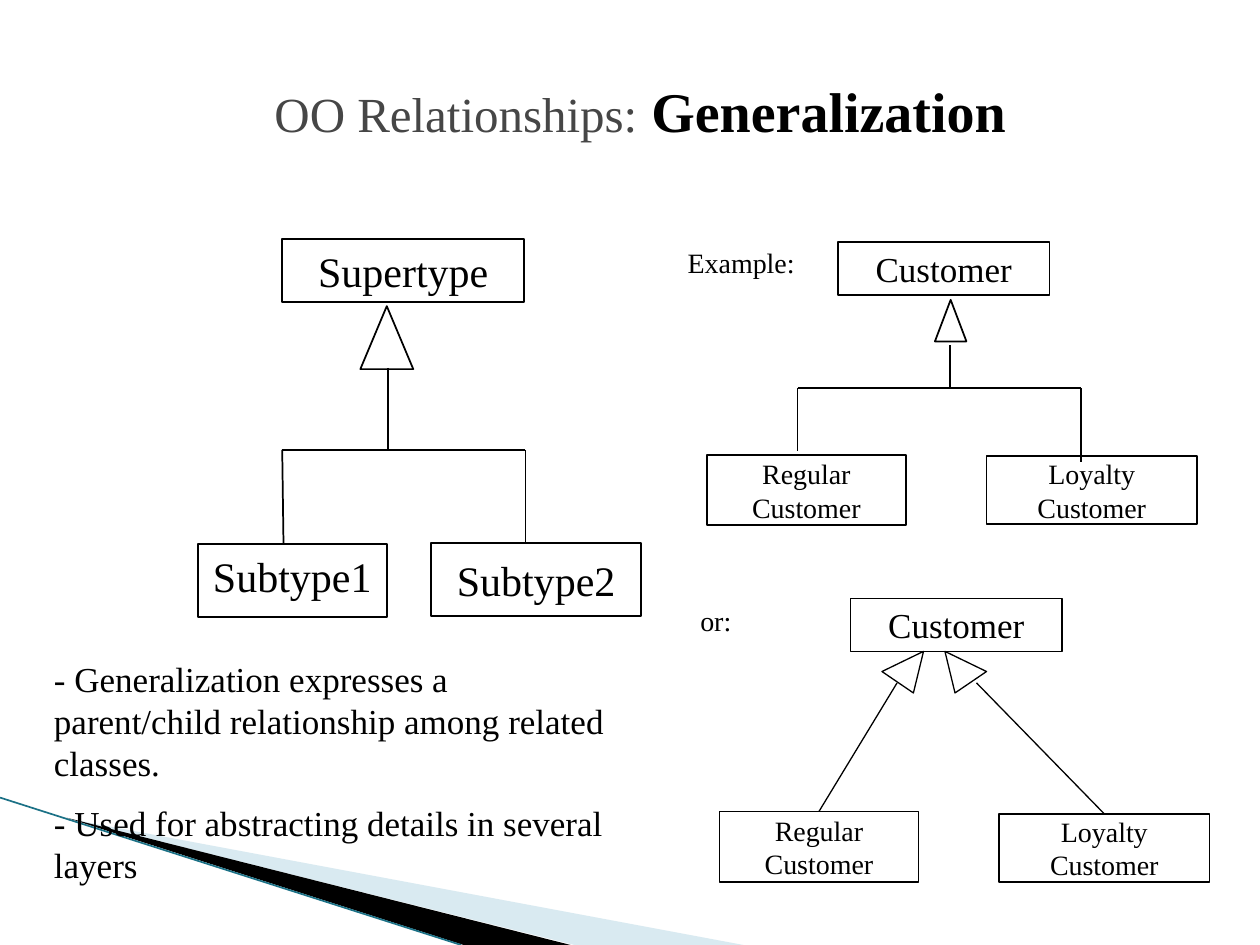
from dataclasses import dataclass

from lxml import etree
from pptx import Presentation
from pptx.dml.color import RGBColor
from pptx.enum.shapes import MSO_CONNECTOR, MSO_SHAPE
from pptx.enum.text import MSO_ANCHOR as Anchor, PP_ALIGN as Align
from pptx.oxml.ns import qn
from pptx.util import Inches, Pt


@dataclass(frozen=True)
class Theme:
    font: str = "Times New Roman"
    ink: RGBColor = RGBColor(0x00, 0x00, 0x00)
    muted: RGBColor = RGBColor(0x46, 0x46, 0x46)
    pale: RGBColor = RGBColor(0xA0, 0xCB, 0xDC)
    edge: RGBColor = RGBColor(0x1B, 0x71, 0x86)
    title: int = 32
    lead: int = 28
    type_name: int = 24
    body: int = 20
    small: int = 16


theme = Theme()
prs = Presentation()
prs.slide_width, prs.slide_height = Inches(10), Inches(7.5)
shapes = prs.slides.add_slide(prs.slide_layouts[6]).shapes


def write(holder, lines, size, align=Align.LEFT, anchor=Anchor.TOP, gap=0):
    """Fill a shape with one paragraph per line, gap points apart."""
    frame = holder.text_frame
    frame.word_wrap = True
    frame.vertical_anchor = anchor
    frame.text = "\n".join(lines)
    for index, paragraph in enumerate(frame.paragraphs):
        paragraph.alignment = align
        paragraph.space_before = Pt(gap if index else 0)
        paragraph.font.name = theme.font
        paragraph.font.size = Pt(size)
        paragraph.font.color.rgb = theme.ink


def draw_line(x1, y1, x2, y2, width=1.0, color=theme.ink):
    line = shapes.add_connector(MSO_CONNECTOR.STRAIGHT, *map(Inches, (x1, y1, x2, y2)))
    line.line.width = Pt(width)
    line.line.color.rgb = color
    etree.SubElement(line._element.spPr, qn("a:effectLst"))
    return line


# Corner decoration
wedges = [
    ([(0.55, 6.5), (5.9, 7.5), (4.56, 7.5)], theme.pale, 40),
    ([(0.53, 6.49), (4.53, 7.5), (3.68, 7.5)], theme.ink, 100),
]
for corners, color, opacity in wedges:
    start, *rest = [(Inches(x), Inches(y)) for x, y in corners]
    outline = shapes.build_freeform(*start)
    outline.add_line_segments(rest)
    wedge = outline.convert_to_shape()
    wedge.shadow.inherit = False
    wedge.fill.solid()
    wedge.fill.fore_color.rgb = color
    wedge.line.fill.background()
    if opacity < 100:
        tint = wedge._element.spPr.find(".//" + qn("a:srgbClr"))
        etree.SubElement(tint, qn("a:alpha")).set("val", str(opacity * 1000))
draw_line(0, 6.33, 3.66, 7.5, 0.95, theme.edge)

# Title
title = shapes.add_textbox(Inches(2.08), Inches(0.56), Inches(6.73), Inches(0.63))
write(title, [""], theme.title)
heading = title.text_frame.paragraphs[0]
for words, size, color, bold in [
    ("OO Relationships:", theme.lead, theme.muted, False),
    (" ", theme.title, theme.muted, False),
    ("Generalization", theme.title, theme.ink, True),
]:
    run = heading.add_run()
    run.text = words
    run.font.size = Pt(size)
    run.font.color.rgb = color
    run.font.bold = bold

# Class boxes: key, lines, left, top, width, height, size
class_boxes = [
    ("supertype", ["Supertype"], 2.24, 1.9, 1.92, 0.5, theme.type_name),
    ("subtype1", ["Subtype1"], 1.57, 4.32, 1.5, 0.58, theme.type_name),
    ("subtype2", ["Subtype2"], 3.42, 4.31, 1.67, 0.58, theme.type_name),
    ("customer", ["Customer"], 6.65, 1.92, 1.68, 0.42, theme.body),
    ("regular", ["Regular", "Customer"], 5.61, 3.61, 1.58, 0.56, theme.small),
    ("loyalty", ["Loyalty", "Customer"], 7.83, 3.62, 1.67, 0.54, theme.small),
    ("or customer", ["Customer"], 6.75, 4.75, 1.68, 0.42, theme.body),
    ("or regular", ["Regular", "Customer"], 5.71, 6.44, 1.58, 0.56, theme.small),
    ("or loyalty", ["Loyalty", "Customer"], 7.93, 6.46, 1.67, 0.54, theme.small),
]
classes = {}
for key, lines, left, top, width, height, size in class_boxes:
    box = shapes.add_shape(MSO_SHAPE.RECTANGLE, *map(Inches, (left, top, width, height)))
    box.shadow.inherit = False
    box.fill.background()
    box.line.color.rgb = theme.ink
    box.line.width = Pt(1)
    write(box, lines, size, Align.CENTER, Anchor.MIDDLE)
    classes[key] = box
classes["subtype1"].text_frame.vertical_anchor = Anchor.TOP

# Generalization trees: upright arrowheads, then stems, bars and branches
for left, top, width, height in [(2.86, 2.43, 0.42, 0.5), (7.42, 2.38, 0.25, 0.33)]:
    arrowhead = shapes.add_shape(
        MSO_SHAPE.ISOSCELES_TRIANGLE, *map(Inches, (left, top, width, height)))
    arrowhead.shadow.inherit = False
    arrowhead.fill.background()
    arrowhead.line.color.rgb = theme.ink
    arrowhead.line.width = Pt(1)

for branch in [
    (3.08, 2.92, 3.08, 3.58, 0.75),
    (2.24, 3.57, 4.17, 3.57),
    (2.24, 3.57, 2.25, 4.32),
    (4.17, 3.57, 4.17, 4.32),
    (7.54, 2.74, 7.54, 3.07),
    (6.33, 3.08, 8.58, 3.08),
    (6.33, 3.08, 6.33, 3.58, 0.75),
    (8.58, 3.08, 8.58, 3.67, 0.75),
]:
    draw_line(*branch)

# Alternative notation: one slanted arrow per subtype
for key, stem, tip, *base in [
    ("or regular", (7.12, 5.42), (7.33, 5.17), (7, 5.33), (7.25, 5.5)),
    ("or loyalty", (7.75, 5.42), (7.5, 5.17), (7.83, 5.33), (7.58, 5.5)),
]:
    draw_line(*stem, *stem, 0.75).begin_connect(classes[key], 0)
    outline = shapes.build_freeform(*map(Inches, tip))
    outline.add_line_segments([(Inches(x), Inches(y)) for x, y in base])
    arrowhead = outline.convert_to_shape()
    arrowhead.shadow.inherit = False
    arrowhead.fill.background()
    arrowhead.line.color.rgb = theme.ink
    arrowhead.line.width = Pt(0.75)

# Captions and explanation
explanation = [
    "- Generalization expresses a parent/child relationship among related classes.",
    "- Used for abstracting details in several layers",
]
for lines, left, top, width, height, size in [
    (["Example:"], 5.36, 1.9, 1.14, 0.37, theme.small),
    (["or:"], 5.46, 4.74, 1.14, 0.37, theme.small),
    (explanation, 0.33, 5.17, 4.58, 1.93, theme.body),
]:
    note = shapes.add_textbox(*map(Inches, (left, top, width, height)))
    write(note, lines, size, gap=10)

prs.save("out.pptx")
